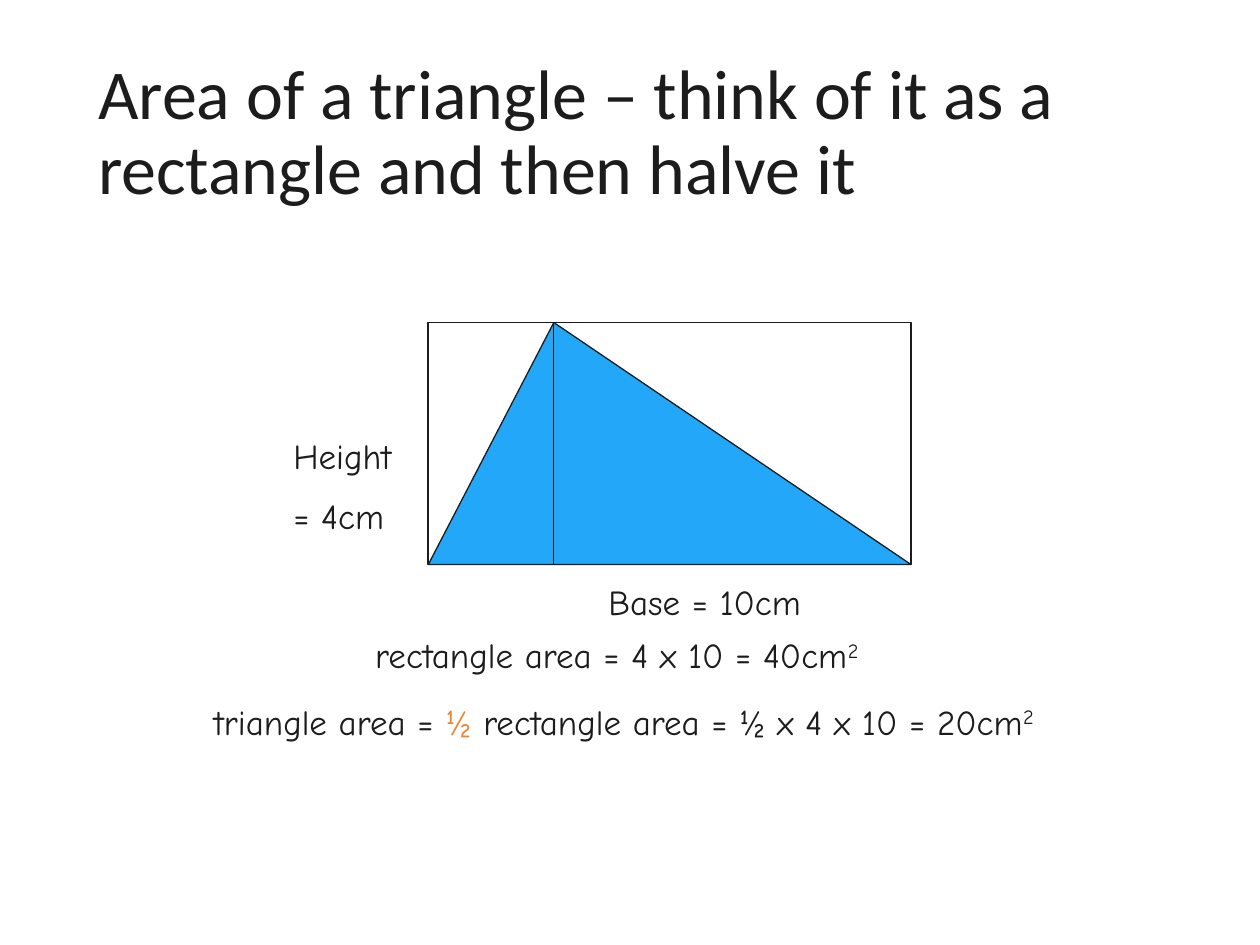
from dataclasses import dataclass

from lxml import etree
from pptx import Presentation
from pptx.dml.color import RGBColor
from pptx.enum.shapes import MSO_CONNECTOR, MSO_SHAPE
from pptx.enum.text import MSO_ANCHOR, MSO_AUTO_SIZE, PP_ALIGN
from pptx.oxml.ns import qn
from pptx.util import Inches, Pt

RECTANGLE = MSO_SHAPE.RECTANGLE
TRIANGLE = MSO_SHAPE.ISOSCELES_TRIANGLE
STRAIGHT = MSO_CONNECTOR.STRAIGHT
MIDDLE = MSO_ANCHOR.MIDDLE
LEFT = PP_ALIGN.LEFT
NO_AUTOFIT = MSO_AUTO_SIZE.NONE
FIT_SHAPE = MSO_AUTO_SIZE.SHAPE_TO_FIT_TEXT

INK = RGBColor(0x1C, 0x1C, 0x1C)
BLUE = RGBColor(0x23, 0xA7, 0xF9)
ORANGE = RGBColor(0xEB, 0x86, 0x34)
TITLE_FONT = "Calibri"
LABEL_FONT = "Comic Neue"
TITLE_ONLY = 5

# Figure geometry in inches; the apex is a share of the base
BASE_LEFT, APEX_TOP = 3.4, 2.56
BASE, HEIGHT = 3.83, 1.92
APEX = 0.26


@dataclass
class Piece:
    text: str
    color: RGBColor = INK
    superscript: bool = False


@dataclass
class Label:
    left: float
    top: float
    width: float
    height: float
    lines: list[list[Piece]]


SQUARED = Piece("2", superscript=True)
AREA_LABELS = [
    Label(2.88, 4.98, 4.66, 0.77,
          [[Piece("rectangle area = 4 x 10 = 40cm"), SQUARED]]),
    Label(1.6, 5.51, 7.07, 0.44,
          [[Piece("triangle area = "), Piece("½", ORANGE),
            Piece(" rectangle area = ½ x 4 x 10 = 20cm"), SQUARED]]),
]
SIDE_LABELS = [
    Label(4.73, 4.56, 2.19, 0.44, [[Piece("Base = 10cm")]]),
    Label(2.23, 3.4, 1.17, 0.94, [[Piece("Height")], [Piece("= 4cm")]]),
]


def draw_label(shapes, label: Label) -> None:
    box = shapes.add_textbox(Inches(label.left), Inches(label.top),
                             Inches(label.width), Inches(label.height))
    frame = box.text_frame
    frame.word_wrap = True
    frame.auto_size = FIT_SHAPE
    for index, pieces in enumerate(label.lines):
        paragraph = frame.add_paragraph() if index else frame.paragraphs[0]
        if index:
            paragraph.space_before = Pt(10)
        for piece in pieces:
            run = paragraph.add_run()
            run.text = piece.text
            run.font.name = LABEL_FONT
            run.font.size = Pt(20)
            run.font.color.rgb = piece.color
            if piece.superscript:
                run._r.get_or_add_rPr().set("baseline", "30000")


def draw_outline(shapes, kind: MSO_SHAPE, line_width: float,
                 fill: RGBColor | None = None):
    """Draw a shape over the full base and height of the figure."""
    figure = shapes.add_shape(kind, Inches(BASE_LEFT), Inches(APEX_TOP),
                              Inches(BASE), Inches(HEIGHT))
    figure.shadow.inherit = False
    if fill is None:
        figure.fill.background()
    else:
        figure.fill.solid()
        figure.fill.fore_color.rgb = fill
    figure.line.color.rgb = INK
    figure.line.width = Pt(line_width)
    return figure


def draw_altitude(shapes) -> None:
    x = Inches(BASE_LEFT + APEX * BASE)
    altitude = shapes.add_connector(STRAIGHT, x, Inches(APEX_TOP),
                                    x, Inches(APEX_TOP + HEIGHT))
    altitude.line.color.rgb = INK
    altitude.line.width = Pt(0.75)
    etree.SubElement(altitude._element.spPr, qn("a:effectLst"))


def draw_title(title) -> None:
    title.left, title.top = Inches(0.5), Inches(0.52)
    title.width, title.height = Inches(8.99), Inches(1.09)
    frame = title.text_frame
    frame.text = "Area of a triangle – think of it as a rectangle and then halve it"
    frame.word_wrap = True
    frame.auto_size = NO_AUTOFIT
    frame.vertical_anchor = MIDDLE
    frame.margin_left = frame.margin_right = Inches(0.28)
    frame.margin_top = frame.margin_bottom = Inches(0.28)
    paragraph = frame.paragraphs[0]
    paragraph.alignment = LEFT
    paragraph.line_spacing = 0.9
    font = paragraph.runs[0].font
    font.name = TITLE_FONT
    font.size = Pt(40)
    font.color.rgb = INK


def main() -> None:
    deck = Presentation()
    deck.slide_width, deck.slide_height = Inches(10), Inches(7.5)
    slide = deck.slides.add_slide(deck.slide_layouts[TITLE_ONLY])
    draw_title(slide.shapes.title)

    # Triangle with its height
    triangle = draw_outline(slide.shapes, TRIANGLE, 0.75, BLUE)
    triangle.adjustments[0] = APEX
    draw_altitude(slide.shapes)

    # Area calculations
    for label in AREA_LABELS:
        draw_label(slide.shapes, label)

    # Enclosing rectangle grouped with its side lengths
    rectangle_group = slide.shapes.add_group_shape()
    draw_outline(rectangle_group.shapes, RECTANGLE, 1)
    for label in SIDE_LABELS:
        draw_label(rectangle_group.shapes, label)

    deck.save("out.pptx")


if __name__ == "__main__":
    main()
